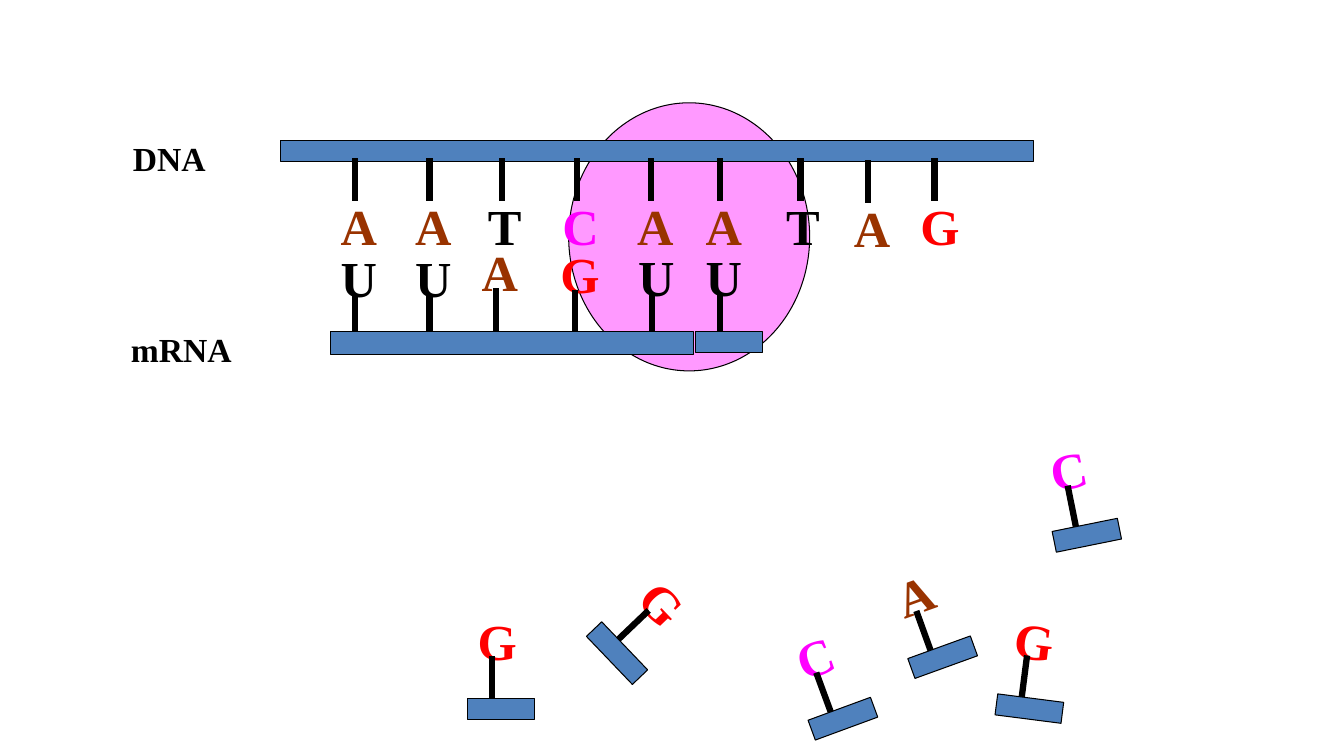
from math import cos, radians, sin

from lxml.etree import SubElement
from pptx import Presentation
from pptx.dml.color import RGBColor
from pptx.enum.shapes import MSO_CONNECTOR, MSO_SHAPE
from pptx.oxml.ns import qn
from pptx.util import Inches, Pt

BLACK = RGBColor(0x00, 0x00, 0x00)
BLUE = RGBColor(0x4F, 0x81, 0xBD)
PINK = RGBColor(0xFF, 0x99, 0xFF)
BASE_COLOURS = {
    "A": RGBColor(0x99, 0x33, 0x00),
    "C": RGBColor(0xFF, 0x00, 0xFF),
    "G": RGBColor(0xFF, 0x00, 0x00),
    "T": BLACK,
    "U": BLACK,
}
BASE_WIDTH, LETTER_HEIGHT, BAR_HEIGHT = 0.66, 0.7, 0.21
STEM_SHIFT, STEM_LENGTH = 0.24, 0.42

deck = Presentation()
deck.slide_width, deck.slide_height = Inches(13.33), Inches(7.5)
page = deck.slides.add_slide(deck.slide_layouts[6])


def add_solid(kind, left, top, width, height, fill, angle=0):
    """Add a filled shape with a thin black outline."""
    shape = page.shapes.add_shape(
        kind, Inches(left), Inches(top), Inches(width), Inches(height))
    shape.shadow.inherit = False
    shape.fill.solid()
    shape.fill.fore_color.rgb = fill
    shape.line.color.rgb = BLACK
    shape.line.width = Pt(0.75)
    shape.rotation = angle


def add_label(text, left, top, width, height, size, colour, angle=0):
    box = page.shapes.add_textbox(
        Inches(left), Inches(top), Inches(width), Inches(height))
    box.rotation = angle
    frame = box.text_frame
    frame.word_wrap = True
    frame.margin_top, frame.margin_bottom = Inches(0.09), 0
    para = frame.paragraphs[0]
    para.text = text
    para.font.name = "Times New Roman"
    para.font.size = Pt(size)
    para.font.bold = True
    para.font.color.rgb = colour


# Polymerase and the DNA strand
add_solid(MSO_SHAPE.OVAL, 5.64, 1.02, 2.39, 2.66, PINK)
add_solid(MSO_SHAPE.RECTANGLE, 2.78, 1.39, 7.47, BAR_HEIGHT, BLUE)

letters, stems, bars = [], [], []

# DNA bases: letter, left, top
for base, left, top in [
    ("A", 3.28, 1.85), ("A", 4.02, 1.85), ("T", 4.74, 1.85),
    ("C", 5.48, 1.85), ("A", 6.22, 1.85), ("A", 6.9, 1.85),
    ("T", 7.7, 1.85), ("A", 8.37, 1.87), ("G", 9.03, 1.85),
]:
    stem_x, stem_end = left + STEM_SHIFT, top + 0.14
    letters.append((base, left, top, 0))
    stems.append((stem_x, stem_end, stem_x, stem_end - STEM_LENGTH))

# mRNA bases: letter, left, top
for base, left, top in [
    ("U", 3.28, 2.36), ("U", 4.02, 2.36), ("A", 4.68, 2.3),
    ("G", 5.46, 2.32), ("U", 6.23, 2.35), ("U", 6.9, 2.35),
]:
    stem_x, stem_start = left + STEM_SHIFT, top + 0.56
    letters.append((base, left, top, 0))
    stems.append((stem_x, stem_start, stem_x, stem_start + STEM_LENGTH))
bars.append((3.28, 3.29, 3.6, 0.23, 0))
bars.append((6.9, 3.29, BASE_WIDTH, BAR_HEIGHT, 0))

# Free nucleotides, turned about the centre of their bar: letter, centre, angle
for base, centre_x, centre_y, angle in [
    ("G", 4.97, 7.03, 0), ("C", 10.78, 5.31, -11.4), ("G", 6.12, 6.48, 46.3),
    ("A", 9.35, 6.52, -19.9), ("C", 8.36, 7.13, -20.2), ("G", 10.21, 7.03, 7.3),
]:
    turn = radians(angle)
    (letter_x, letter_y), stem_start, stem_end = [
        (centre_x + x * cos(turn) - y * sin(turn),
         centre_y + x * sin(turn) + y * cos(turn))
        for x, y in [(0, -0.72), (-0.09, -0.52), (-0.09, -0.1)]
    ]
    letters.append((base, letter_x - BASE_WIDTH / 2,
                    letter_y - LETTER_HEIGHT / 2, angle))
    stems.append((*stem_start, *stem_end))
    bars.append((centre_x - BASE_WIDTH / 2, centre_y - BAR_HEIGHT / 2,
                 BASE_WIDTH, BAR_HEIGHT, angle))

for base, left, top, angle in letters:
    add_label(base, left, top, BASE_WIDTH, LETTER_HEIGHT, 36,
              BASE_COLOURS[base], angle)

for ends in stems:
    stem = page.shapes.add_connector(
        MSO_CONNECTOR.STRAIGHT, *[Inches(value) for value in ends])
    stem.line.color.rgb = BLACK
    stem.line.width = Pt(4.5)
    SubElement(stem.element.spPr, qn("a:effectLst"))

for left, top, width, height, angle in bars:
    add_solid(MSO_SHAPE.RECTANGLE, left, top, width, height, BLUE, angle)

add_label("mRNA", 1.2, 3.17, 1.41, 0.5, 24, BLACK)
add_label("DNA", 1.22, 1.28, 1.18, 0.5, 24, BLACK)

deck.save("out.pptx")
